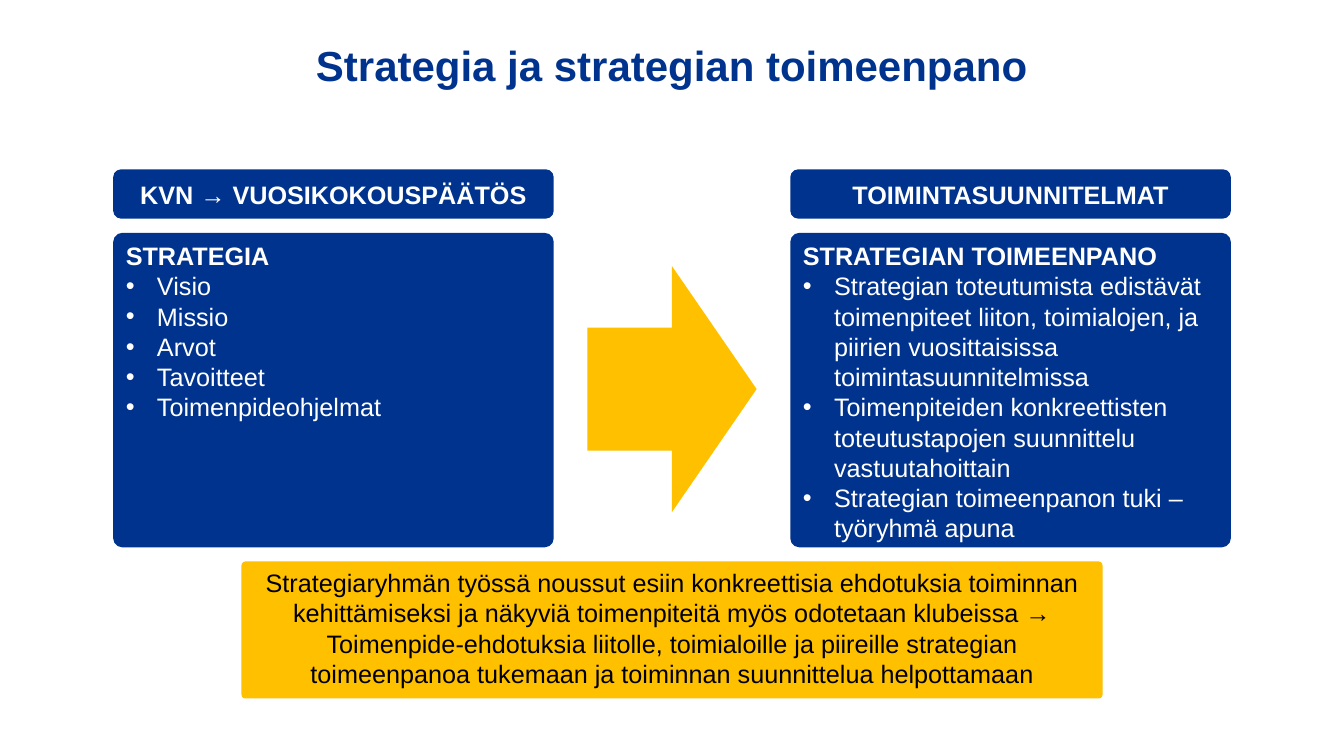
from dataclasses import dataclass

from lxml import etree
from pptx import Presentation
from pptx.dml.color import RGBColor
from pptx.enum.shapes import MSO_SHAPE
from pptx.enum.text import MSO_ANCHOR, PP_ALIGN
from pptx.oxml.ns import qn
from pptx.util import Inches, Pt

ROUNDED = MSO_SHAPE.ROUNDED_RECTANGLE
RIGHT_ARROW = MSO_SHAPE.RIGHT_ARROW
TOP, MIDDLE = MSO_ANCHOR.TOP, MSO_ANCHOR.MIDDLE
LEFT, CENTER = PP_ALIGN.LEFT, PP_ALIGN.CENTER


@dataclass(frozen=True)
class Theme:
    blue: RGBColor = RGBColor(0x00, 0x33, 0x8D)
    gold: RGBColor = RGBColor(0xFF, 0xC0, 0x00)
    white: RGBColor = RGBColor(0xFF, 0xFF, 0xFF)
    black: RGBColor = RGBColor(0x00, 0x00, 0x00)
    font: str = "Arial"
    title_size: int = 30
    body_size: int = 18
    bullet_indent: float = 0.31


class SlideBuilder:
    def __init__(self, deck, theme):
        self.theme = theme
        self.width, self.height = deck.slide_width, deck.slide_height
        self.page = deck.slides.add_slide(deck.slide_layouts[5])

    def frame(self, left, top, width, height):
        return (
            round(self.width * left / 100),
            round(self.height * top / 100),
            round(self.width * width / 100),
            round(self.height * height / 100),
        )

    def style(self, paragraph, color, size, bold=False, align=LEFT):
        paragraph.alignment = align
        paragraph.line_spacing = 1.0
        paragraph.space_before = paragraph.space_after = Pt(0)
        font = paragraph.font
        font.name, font.size, font.bold = self.theme.font, Pt(size), bold
        font.color.rgb = color

    def title(self, text, top, width, height):
        box = self.page.shapes.title
        box.left, box.top, box.width, box.height = self.frame(
            (100 - width) / 2, top, width, height
        )
        box.text_frame.text = text
        box.text_frame.vertical_anchor = TOP
        self.style(box.text_frame.paragraphs[0], self.theme.blue,
                   self.theme.title_size, True, CENTER)

    def shape(self, kind, frame, fill, corner=None):
        shape = self.page.shapes.add_shape(kind, *self.frame(*frame))
        shape.shadow.inherit = False
        shape.fill.solid()
        shape.fill.fore_color.rgb = fill
        shape.line.fill.background()
        if corner is not None:
            shape.adjustments[0] = corner
        return shape

    def label(self, text, frame, fill, color, corner, bold=False, anchor=TOP):
        box = self.shape(ROUNDED, frame, fill, corner)
        box.text_frame.word_wrap = True
        box.text_frame.vertical_anchor = anchor
        box.text_frame.text = text
        self.style(box.text_frame.paragraphs[0], color,
                   self.theme.body_size, bold, CENTER)

    def bullet(self, paragraph):
        properties = paragraph._p.get_or_add_pPr()
        indent = Inches(self.theme.bullet_indent)
        properties.set("marL", str(indent))
        properties.set("indent", str(-indent))
        etree.SubElement(properties, qn("a:buFont")).set("typeface", self.theme.font)
        etree.SubElement(properties, qn("a:buChar")).set("char", "•")

    def panel(self, heading, items, frame):
        box = self.shape(ROUNDED, frame, self.theme.blue, 0.029)
        text_frame = box.text_frame
        text_frame.word_wrap = True
        text_frame.vertical_anchor = TOP
        text_frame.text = "\n".join([heading, *items])
        for index, paragraph in enumerate(text_frame.paragraphs):
            if index:
                self.bullet(paragraph)
            self.style(paragraph, self.theme.white, self.theme.body_size, index == 0)


def main():
    deck = Presentation()
    deck.slide_width, deck.slide_height = Inches(13.33), Inches(7.5)
    theme = Theme()
    builder = SlideBuilder(deck, theme)
    builder.title("Strategia ja strategian toimeenpano", 4.53, 62, 8.13)

    margin, column = 8.42, 32.78
    columns = [
        ("KVN → VUOSIKOKOUSPÄÄTÖS", "STRATEGIA",
         ["Visio", "Missio", "Arvot", "Tavoitteet", "Toimenpideohjelmat"]),
        ("TOIMINTASUUNNITELMAT", "STRATEGIAN TOIMEENPANO",
         ["Strategian toteutumista edistävät toimenpiteet liiton, toimialojen, "
          "ja piirien vuosittaisissa toimintasuunnitelmissa",
          "Toimenpiteiden konkreettisten toteutustapojen suunnittelu vastuutahoittain",
          "Strategian toimeenpanon tuki –työryhmä apuna"]),
    ]
    for (label, heading, items), left in zip(columns, (margin, 100 - margin - column)):
        builder.label(label, (left, 22.4, column, 6.53), theme.blue, theme.white,
                      0.16, True, MIDDLE)
        builder.panel(heading, items, (left, 30.8, column, 41.6))

    arrow, banner = 12.6, 64.07
    builder.shape(RIGHT_ARROW, ((100 - arrow) / 2, 35.2, arrow, 32.53), theme.gold)
    builder.label(
        "Strategiaryhmän työssä noussut esiin konkreettisia ehdotuksia toiminnan "
        "kehittämiseksi ja näkyviä toimenpiteitä myös odotetaan klubeissa → "
        "Toimenpide-ehdotuksia liitolle, toimialoille ja piireille strategian "
        "toimeenpanoa tukemaan ja toiminnan suunnittelua helpottamaan",
        ((100 - banner) / 2, 74.27, banner, 18.13), theme.gold, theme.black, 0.029)
    deck.save("out.pptx")


if __name__ == "__main__":
    main()
